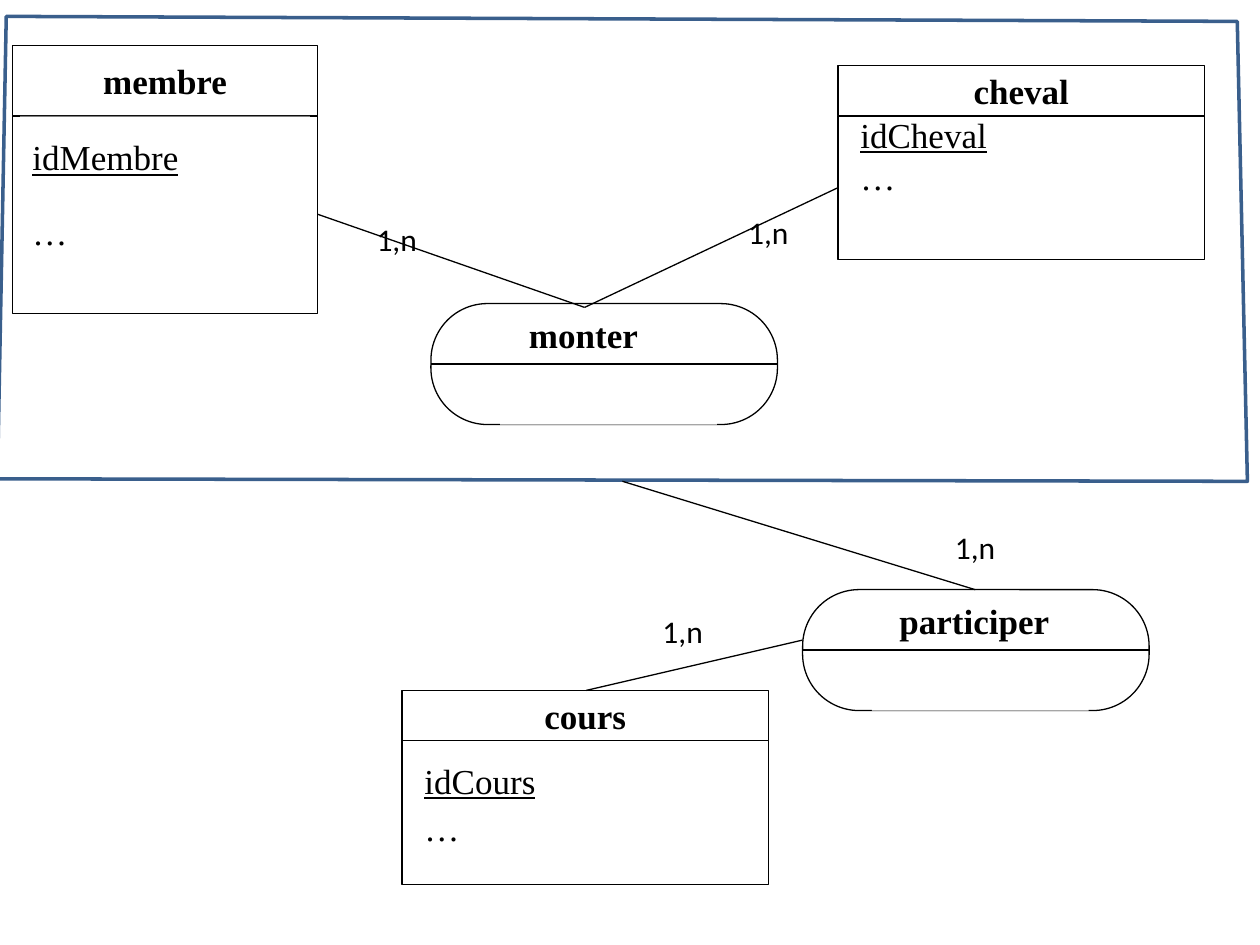
from dataclasses import dataclass

from lxml.etree import SubElement
from pptx import Presentation
from pptx.dml.color import RGBColor
from pptx.enum.shapes import MSO_CONNECTOR, MSO_SHAPE
from pptx.enum.text import MSO_ANCHOR, MSO_AUTO_SIZE, PP_ALIGN
from pptx.oxml.ns import qn
from pptx.util import Inches, Pt


@dataclass(frozen=True)
class Theme:
    ink: RGBColor = RGBColor(0, 0, 0)
    paper: RGBColor = RGBColor(255, 255, 255)
    frame: RGBColor = RGBColor(0x3A, 0x5F, 0x8C)
    serif: str = "Times New Roman"
    sans: str = "Calibri"
    name: int = 20
    card: int = 18
    thin: float = 0.75
    thick: float = 2


THEME = Theme()


def stroke(item, color=THEME.ink, width=THEME.thin):
    item.line.color.rgb = color
    item.line.width = Pt(width)


def write(shape, lines, size=THEME.name, font=THEME.serif, bold=False,
          align=PP_ALIGN.LEFT, anchor=MSO_ANCHOR.MIDDLE):
    """Fill a shape with lines given as (text, underline) pairs."""
    frame = shape.text_frame
    frame.word_wrap = False
    frame.vertical_anchor = anchor
    for i, (text, under) in enumerate(lines):
        para = frame.add_paragraph() if i else frame.paragraphs[0]
        para.alignment = align
        run = para.add_run()
        run.text = text
        run.font.name = font
        run.font.size = Pt(size)
        run.font.bold = bold
        run.font.underline = under
        run.font.color.rgb = THEME.ink


def box(parent, x, y, w, h, edge=True, clear=False, kind=MSO_SHAPE.RECTANGLE):
    """White shape, half transparent when clear is set."""
    shape = parent.shapes.add_shape(kind, Inches(x), Inches(y), Inches(w), Inches(h))
    shape.shadow.inherit = False
    shape.fill.solid()
    shape.fill.fore_color.rgb = THEME.paper
    if clear:
        color = shape._element.spPr.find(qn("a:solidFill"))[0]
        SubElement(color, qn("a:alpha")).set("val", "50000")
    if edge:
        stroke(shape)
    else:
        shape.line.fill.background()
    return shape


def link(parent, x1, y1, x2, y2):
    line = parent.shapes.add_connector(
        MSO_CONNECTOR.STRAIGHT, Inches(x1), Inches(y1), Inches(x2), Inches(y2))
    stroke(line)
    SubElement(line._element.spPr, qn("a:effectLst"))


def entity(slide, name, x, y, w, head, body, rows, pad):
    """Titled box; each row is (top, height, lines, bottom inset)."""
    group = slide.shapes.add_group_shape()
    box(group, x, y + head, w, body, clear=True)
    title = box(group, x, y, w, head, clear=True)
    write(title, [(name, False)], bold=True, align=PP_ALIGN.CENTER)
    for top, high, lines, inset in rows:
        row = box(group, x + pad, top, w - 2 * pad, high, edge=False, clear=True)
        row.text_frame.margin_bottom = Inches(inset)
        write(row, lines)


def relation(slide, name, x, y, shift, wide):
    """Rounded box cut in half, with its name in the upper part."""
    w, h = 2.75, 0.96
    group = slide.shapes.add_group_shape()
    pill = box(group, x, y, w, h, kind=MSO_SHAPE.ROUNDED_RECTANGLE)
    pill.adjustments[0] = 0.467
    link(group, x, y + h / 2, x + w, y + h / 2)
    label = box(group, x + shift, y + 0.03, wide, 0.44, edge=False)
    write(label, [(name, False)], bold=True, anchor=MSO_ANCHOR.TOP)
    box(group, x + 0.55, y + 0.51, 1.72, 0.45, edge=False)


def card(slide, x, y):
    label = slide.shapes.add_textbox(Inches(x), Inches(y), Inches(0.53), Inches(0.4))
    write(label, [("1,n", False)], THEME.card, THEME.sans, anchor=MSO_ANCHOR.TOP)
    label.text_frame.auto_size = MSO_AUTO_SIZE.SHAPE_TO_FIT_TEXT


def outline(slide, points):
    first, *rest = [(Inches(x), Inches(y)) for x, y in points]
    maker = slide.shapes.build_freeform(*first)
    maker.add_line_segments(rest, close=True)
    shape = maker.convert_to_shape()
    shape.shadow.inherit = False
    shape.fill.background()
    stroke(shape, THEME.frame, THEME.thick)


def main():
    deck = Presentation()
    deck.slide_width, deck.slide_height = Inches(10), Inches(7.5)
    slide = deck.slides.add_slide(deck.slide_layouts[6])
    dots = ("…", False)

    # Entities
    entity(slide, "cours", 3.19, 5.48, 2.91, 0.4, 1.14, [
        (5.96, 0.47, [("idCours", True)], 0.05),
        (6.49, 0.47, [dots], 0.36)], 0.08)
    entity(slide, "membre", 0.1, 0.36, 2.42, 0.56, 1.57, [
        (0.92, 0.65, [("idMembre", True)], 0.05),
        (1.57, 0.54, [dots], 0.05)], 0.06)
    entity(slide, "cheval", 6.65, 0.52, 2.91, 0.4, 1.14, [
        (1, 0.47, [("idCheval", True), dots], 0.05)], 0.08)

    # Riding relation and its links
    relation(slide, "monter", 3.42, 2.41, 0.68, 1.07)
    link(slide, 2.52, 1.7, 4.64, 2.44)
    link(slide, 6.65, 1.49, 4.64, 2.44)
    card(slide, 2.89, 1.7)
    card(slide, 5.84, 1.64)

    # Link to the course
    link(slide, 6.37, 5.08, 4.65, 5.48)
    card(slide, 5.16, 4.81)

    # Frame around the aggregate
    outline(slide, [(-0.02, 3.8), (9.9, 3.82), (9.82, 0.17), (0.05, 0.13)])

    # Attendance relation and its link
    relation(slide, "participer", 6.37, 4.68, 0.67, 1.4)
    card(slide, 7.48, 4.14)
    link(slide, 4.94, 3.82, 7.74, 4.68)

    deck.save("out.pptx")


if __name__ == "__main__":
    main()
